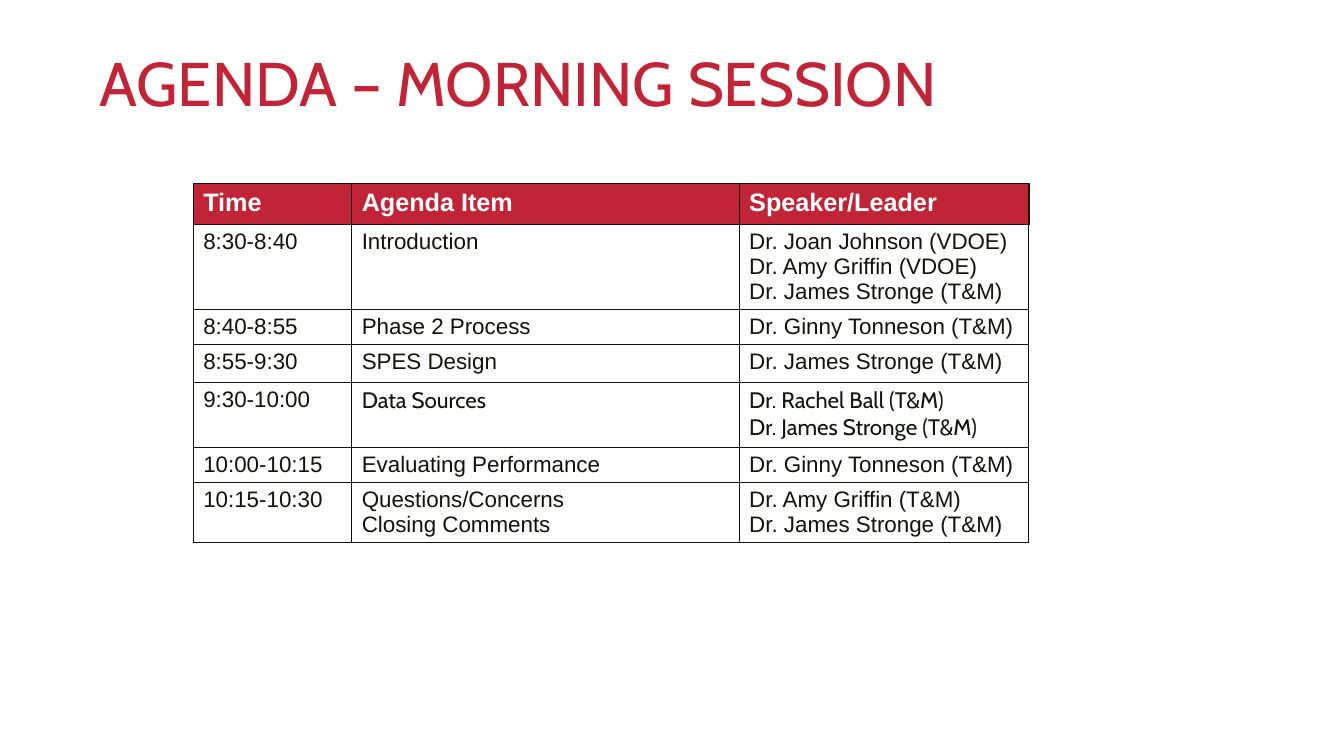
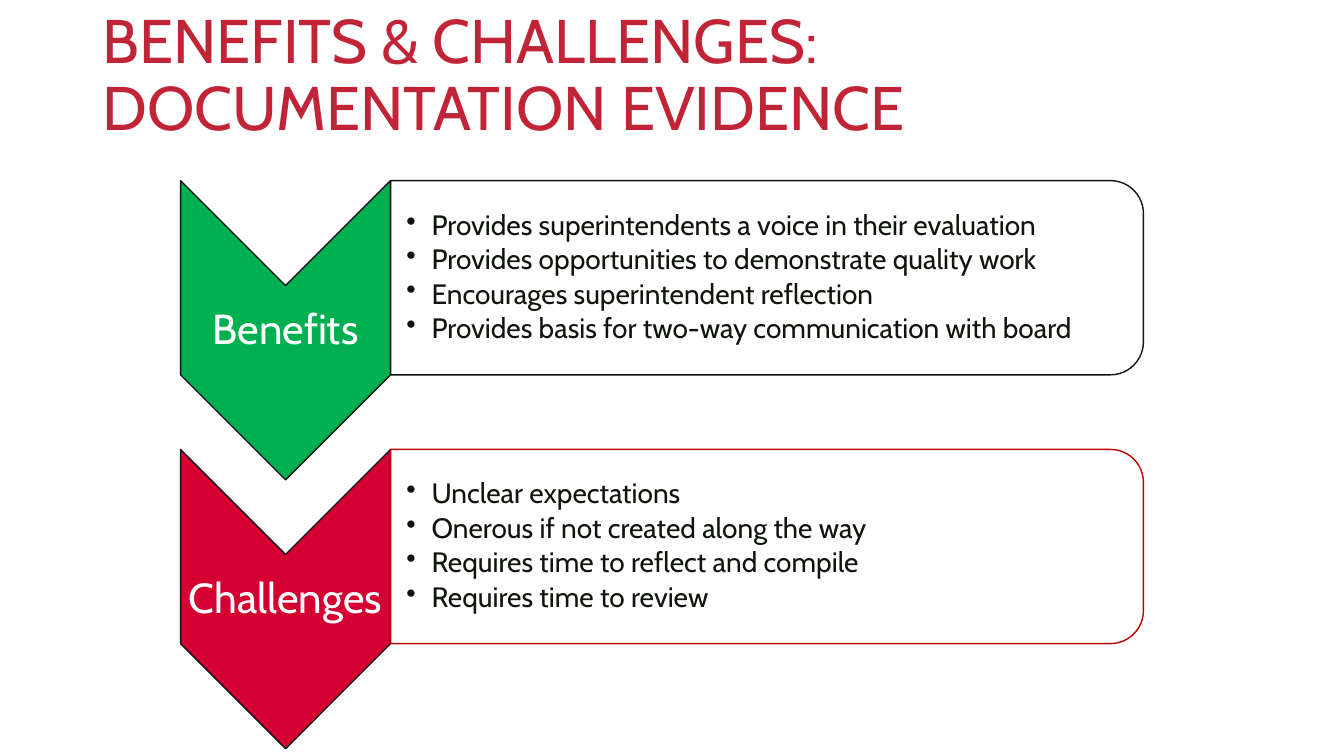
from dataclasses import dataclass

from lxml import etree
from pptx import Presentation
from pptx.dml.color import RGBColor
from pptx.enum.shapes import MSO_SHAPE
from pptx.enum.text import MSO_ANCHOR, MSO_AUTO_SIZE, PP_ALIGN
from pptx.oxml.ns import qn
from pptx.util import Emu, Pt

CHEVRON = MSO_SHAPE.CHEVRON
ROUND = MSO_SHAPE.ROUND_2_SAME_RECTANGLE
MIDDLE = MSO_ANCHOR.MIDDLE
LEFT = PP_ALIGN.LEFT
CENTER = PP_ALIGN.CENTER
FIXED = MSO_AUTO_SIZE.NONE
TITLE_ONLY = 5


@dataclass(frozen=True)
class Theme:
    red: str = "C12436"
    ink: str = "0F150D"
    edge: str = "0E1417"
    white: str = "FFFFFF"
    green: str = "00B050"
    crimson: str = "D50032"
    rust: str = "C00000"
    face: str = "Cabin"
    plain: str = "Arial"
    title: int = 44
    label: int = 30
    bullet: int = 20
    head: int = 18
    cell: int = 16
    tight: float = 0.9


T = Theme()

COLS = [151, 369, 276]
AGENDA = [
    (39, T.plain, ["Time", "Agenda Item", "Speaker/Leader"]),
    (80, T.plain, ["8:30-8:40", "Introduction",
                   "Dr. Joan Johnson (VDOE)\nDr. Amy Griffin (VDOE)\nDr. James Stronge (T&M)"]),
    (33, T.plain, ["8:40-8:55", "Phase 2 Process", "Dr. Ginny Tonneson (T&M)"]),
    (36, T.plain, ["8:55-9:30", "SPES Design", "Dr. James Stronge (T&M)"]),
    (62, T.face, ["9:30-10:00", "Data Sources",
                  "Dr. Rachel Ball (T&M)\nDr. James Stronge (T&M)"]),
    (33, T.plain, ["10:00-10:15", "Evaluating Performance", "Dr. Ginny Tonneson (T&M)"]),
    (57, T.plain, ["10:15-10:30", "Questions/Concerns\nClosing Comments",
                   "Dr. Amy Griffin (T&M)\nDr. James Stronge (T&M)"]),
]

PANELS = [
    ("Benefits", T.green, T.edge, [
        "Provides superintendents a voice in their evaluation",
        "Provides opportunities to demonstrate quality work",
        "Encourages superintendent reflection",
        "Provides basis for two-way communication with board",
    ]),
    ("Challenges", T.crimson, T.rust, [
        "Unclear expectations",
        "Onerous if not created along the way",
        "Requires time to reflect and compile",
        "Requires time to review",
    ]),
]
PANEL_TOP = 172
PANEL_STEP = 256


def px(n):
    return Emu(round(n * 9525))


def rgb(code):
    return RGBColor.from_string(code)


def style(frame, face, size, color, bold=False, align=LEFT, space=None):
    for para in frame.paragraphs:
        para.alignment = align
        if space:
            para.line_spacing = space
        for run in para.runs:
            font = run.font
            font.name, font.size, font.bold = face, Pt(size), bold
            font.color.rgb = rgb(color)


def add_slide(deck, title, left, top):
    slide = deck.slides.add_slide(deck.slide_layouts[TITLE_ONLY])
    head = slide.shapes.title
    head.left, head.top, head.width, head.height = map(px, (left, top, 1104, 139))
    frame = head.text_frame
    frame.text = title
    frame.auto_size = FIXED
    frame.word_wrap = True
    frame.vertical_anchor = MIDDLE
    style(frame, T.face, T.title, T.red, space=T.tight)
    return slide


def set_edges(cell, width):
    props = cell._tc.get_or_add_tcPr()
    for side in ("a:lnL", "a:lnR", "a:lnT", "a:lnB"):
        line = etree.SubElement(props, qn(side), w=str(Pt(width)))
        fill = etree.SubElement(line, qn("a:solidFill"))
        etree.SubElement(fill, qn("a:srgbClr"), val=T.ink)


def fill_cell(cell, text, face, head):
    cell.text_frame.text = text
    size, color = (T.head, T.white) if head else (T.cell, T.ink)
    style(cell.text_frame, face, size, color, bold=head)
    set_edges(cell, 1 if head else 0.75)
    cell.fill.solid()
    cell.fill.fore_color.rgb = rgb(T.red if head else T.white)


def add_grid(slide, left, top):
    high = sum(row[0] for row in AGENDA)
    box = map(px, (left, top, sum(COLS), high))
    table = slide.shapes.add_table(len(AGENDA), len(COLS), *box).table
    table.horz_banding = False
    for col, width in zip(table.columns, COLS):
        col.width = px(width)
    for r, (height, face, texts) in enumerate(AGENDA):
        table.rows[r].height = px(height)
        for c, text in enumerate(texts):
            fill_cell(table.cell(r, c), text, face if c else T.plain, r == 0)


def add_turned(slide, kind, box, adjust, fill, line):
    left, top, width, height = box
    shift = (width - height) / 2
    shape = slide.shapes.add_shape(
        kind, px(left + shift), px(top - shift), px(height), px(width))
    shape.rotation = 90
    for i, value in enumerate(adjust):
        shape.adjustments[i] = value
    shape.shadow.inherit = False
    shape.fill.solid()
    shape.fill.fore_color.rgb = rgb(fill)
    shape.line.color.rgb = rgb(line)
    shape.line.width = Pt(1)


def add_text(slide, box, text, inset, side):
    frame = slide.shapes.add_textbox(*map(px, box)).text_frame
    frame.word_wrap = True
    frame.vertical_anchor = MIDDLE
    frame.margin_left = px(inset)
    frame.margin_right = frame.margin_top = frame.margin_bottom = px(side)
    frame.text = text
    return frame


def add_dots(frame):
    for i, para in enumerate(frame.paragraphs):
        props = para._p.get_or_add_pPr()
        props.set("marL", str(px(24)))
        props.set("indent", str(px(-24)))
        tint = etree.SubElement(props, qn("a:buClr"))
        etree.SubElement(tint, qn("a:srgbClr"), val=T.ink)
        etree.SubElement(props, qn("a:buChar"), char="•")
        if i:
            para.space_before = Pt(3)


def add_panel(slide, top, name, fill, line, items):
    add_turned(slide, CHEVRON, (172, top, 200, 285), [0.5], fill, T.edge)
    label = add_text(slide, (172, top + 101, 200, 85), name, 2, 2)
    style(label, T.face, T.label, T.white, align=CENTER, space=T.tight)
    add_turned(slide, ROUND, (372, top, 717, 185), [0.17, 0], T.white, line)
    body = add_text(slide, (372, top + 9, 810, 167), "\n".join(items), 15, 1)
    add_dots(body)
    style(body, T.face, T.bullet, T.ink, space=T.tight)


def main():
    deck = Presentation()
    deck.slide_width, deck.slide_height = px(1280), px(720)
    slide = add_slide(deck, "AGENDA – MORNING SESSION", 85, 13)
    add_grid(slide, 184, 175)
    slide = add_slide(deck, "BENEFITS & CHALLENGES: DOCUMENTATION EVIDENCE", 88, 4)
    for i, panel in enumerate(PANELS):
        add_panel(slide, PANEL_TOP + i * PANEL_STEP, *panel)
    deck.save("out.pptx")


if __name__ == "__main__":
    main()
